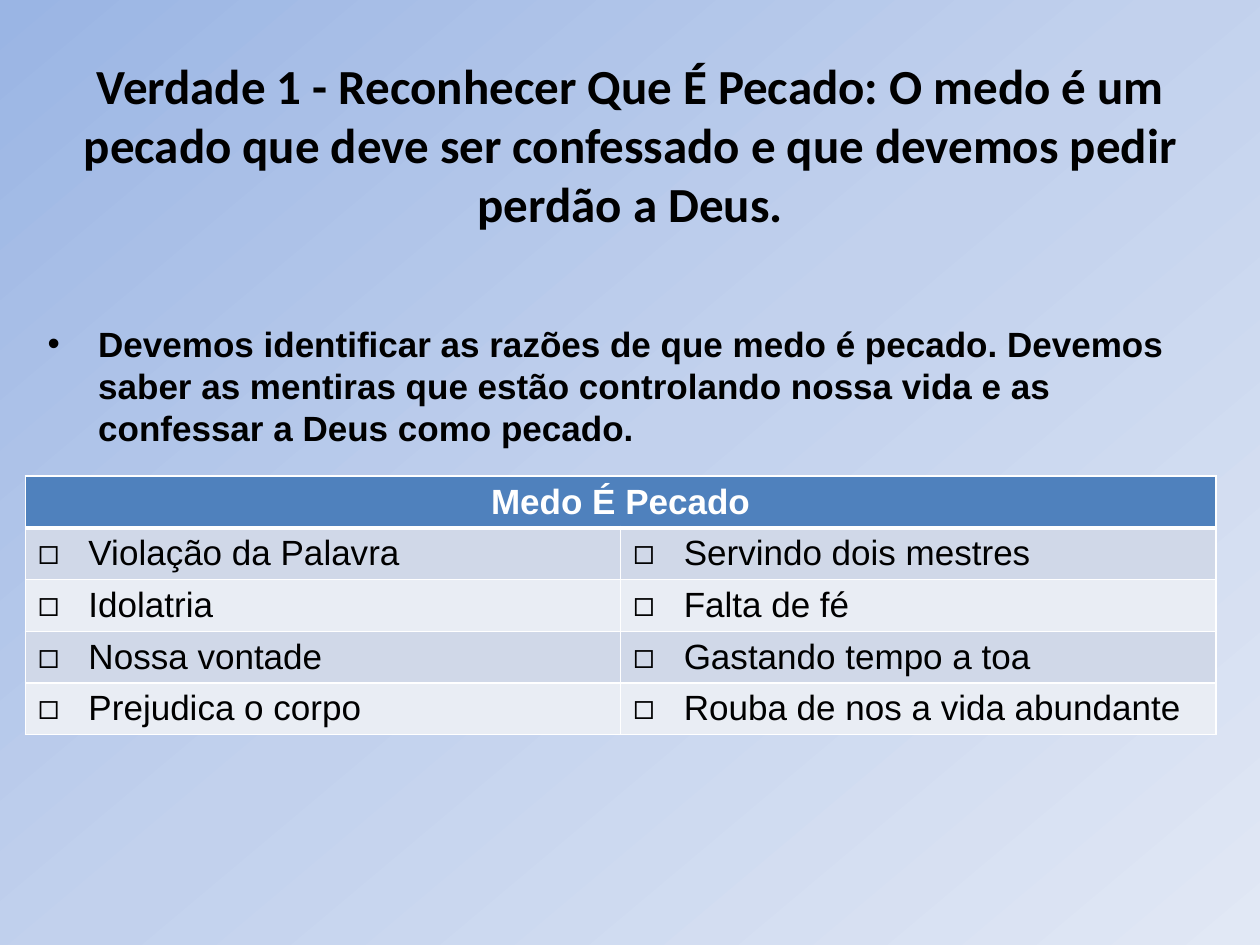
from copy import deepcopy

from lxml import etree
from pptx import Presentation
from pptx.dml.color import RGBColor
from pptx.enum.text import MSO_ANCHOR, MSO_AUTO_SIZE, PP_ALIGN
from pptx.oxml.ns import qn
from pptx.util import Cm, Pt

CENTER, LEFT = PP_ALIGN.CENTER, PP_ALIGN.LEFT
TOP, NO_FIT = MSO_ANCHOR.TOP, MSO_AUTO_SIZE.NONE

TITLE = ("Verdade 1 - Reconhecer Que É Pecado: O medo é um pecado que deve "
         "ser confessado e que devemos pedir perdão a Deus.")
BODY = ("Devemos identificar as razões de que medo é pecado. Devemos saber as "
        "mentiras que estão controlando nossa vida e as confessar a Deus como pecado.")
TABLE_HEADING = "Medo É Pecado"
REASONS = [
    ("Violação da Palavra", "Servindo dois mestres"),
    ("Idolatria", "Falta de fé"),
    ("Nossa vontade", "Gastando tempo a toa"),
    ("Prejudica o corpo", "Rouba de nos a vida abundante"),
]
COLORS = {"text": "000000", "white": "FFFFFF", "heading": "4F81BD",
          "odd": "D0D8E8", "even": "E9EDF4"}
GRADIENT = [(0, "9AB5E4"), (0.5, "C2D1ED"), (1, "E1E8F5")]
TITLE_BOX = (1.27, 1, 22.86, 3.9)
BODY_BOX = (0.71, 6.38, 24, 2.9)
TABLE_BOX = (0.51, 9.6, 24, 5.2)
INDENT = 1.02
BORDERS = ("a:lnL", "a:lnR", "a:lnT", "a:lnB")


def write(frame, text, alignment=LEFT, color="text", bullet=None, **font):
    paragraph = frame.paragraphs[0]
    paragraph.text = text
    paragraph.alignment = alignment
    if bullet:
        properties = paragraph._p.get_or_add_pPr()
        properties.set("marL", str(Cm(INDENT)))
        properties.set("indent", str(-Cm(INDENT)))
        etree.SubElement(properties, qn("a:buFont"), typeface="Arial")
        etree.SubElement(properties, qn("a:buChar"), char=bullet)
    settings = {"name": "Arial", "size": Pt(20), "bold": True, **font}
    for name, value in settings.items():
        setattr(paragraph.font, name, value)
    paragraph.font.color.rgb = RGBColor.from_string(COLORS[color])


def format_cell(cell, fill, bottom_width=1):
    cell.fill.solid()
    cell.fill.fore_color.rgb = RGBColor.from_string(COLORS[fill])
    properties = cell._tc.get_or_add_tcPr()
    for position, tag in enumerate(BORDERS):
        width = bottom_width if tag == "a:lnB" else 1
        line = etree.Element(qn(tag), w=str(Pt(width)))
        solid = etree.SubElement(line, qn("a:solidFill"))
        etree.SubElement(solid, qn("a:srgbClr"), val=COLORS["white"])
        properties.insert(position, line)


def paint_background(slide):
    fill = slide.background.fill
    fill.gradient()
    fill.gradient_angle = 310
    stop_list = slide.element.find(".//" + qn("a:gsLst"))
    stop_list.append(deepcopy(stop_list[-1]))
    for stop, (position, color) in zip(fill.gradient_stops, GRADIENT):
        stop.position = position
        stop.color.rgb = RGBColor.from_string(color)


def add_reasons(slide):
    row_count = len(REASONS) + 1
    box = [Cm(value) for value in TABLE_BOX]
    table = slide.shapes.add_table(row_count, 2, *box).table
    for row in table.rows:
        row.height = Cm(TABLE_BOX[3] / row_count)
    for cell in table.rows[0].cells:
        format_cell(cell, "heading", 3)
    table.cell(0, 0).merge(table.cell(0, 1))
    write(table.cell(0, 0).text_frame, TABLE_HEADING, CENTER, "white")
    for row, reasons in enumerate(REASONS, 1):
        for column, reason in enumerate(reasons):
            cell = table.cell(row, column)
            format_cell(cell, "odd" if row % 2 else "even")
            write(cell.text_frame, reason, bullet="◻", bold=False)


def main():
    """Build the slide and save it."""
    presentation = Presentation()
    presentation.slide_width, presentation.slide_height = Cm(25.4), Cm(19.05)
    slide = presentation.slides.add_slide(presentation.slide_layouts[5])
    paint_background(slide)

    title = slide.shapes.title
    title.left, title.top, title.width, title.height = map(Cm, TITLE_BOX)
    body = slide.shapes.add_textbox(*map(Cm, BODY_BOX))
    for shape in (title, body):
        frame = shape.text_frame
        frame.word_wrap = True
        frame.auto_size = NO_FIT
        frame.vertical_anchor = TOP
    write(title.text_frame, TITLE, CENTER, name="Calibri", size=Pt(28))
    write(body.text_frame, BODY, bullet="•")
    add_reasons(slide)
    presentation.save("out.pptx")


if __name__ == "__main__":
    main()
